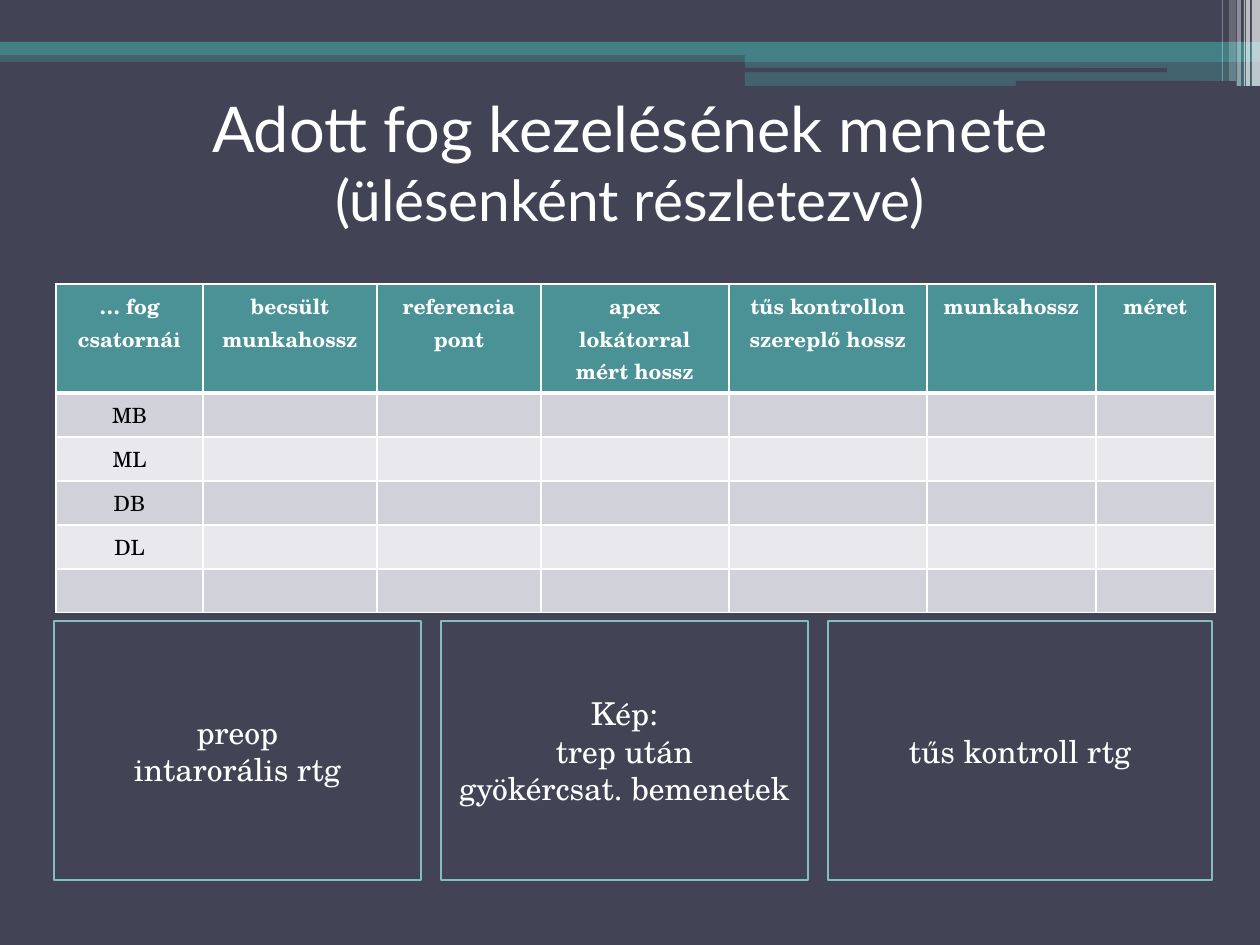
from lxml import etree
from pptx import Presentation
from pptx import util as u
from pptx.dml.color import RGBColor
from pptx.enum import shapes, text
from pptx.oxml.ns import qn

PX = 914400 // 126
DARK, TEAL, WHITE = "424456", "438086", "FFFFFF"
SERIF = "TeX Gyre Schola"
RECT = shapes.MSO_SHAPE.RECTANGLE
ROUND = shapes.MSO_SHAPE.ROUNDED_RECTANGLE

# left, top, width, height, colour, opacity in percent
BARS = [
    (0, 50, 1260, 12, TEAL, 50),
    (0, 0, 1260, 43, DARK, 100),
    (0, 42, 1260, 13, TEAL, 100),
    (745, 49, 515, 13, TEAL, 100),
    (745, 61, 515, 25, TEAL, 50),
]
GROOVES = [(745, 68, 422, 4), (1016, 81, 220, 5)]
# left, width, height, opacity in percent
STRIPES = [
    (1252, 8, 86, 65), (1246, 4, 86, 65), (1244, 1, 86, 60),
    (1237, 4, 86, 40), (1229, 7, 81, 20), (1222, 1, 81, 30),
]
HEADS = [
    ["… fog", "csatornái"], ["becsült munkahossz"], ["referencia pont"],
    ["apex lokátorral mért hossz"], ["tűs kontrollon szereplő hossz"],
    ["munkahossz"], ["méret"],
]
WIDTHS = [147, 174, 164, 188, 198, 169, 119]
CANALS = ["MB", "ML", "DB", "DL", ""]
FRAMES = [
    (54, 367, ["preop", "intarorális rtg"]),
    (441, 367, ["Kép:", "trep után", "gyökércsat. bemenetek"]),
    (828, 384, ["tűs kontroll rtg"]),
]


def rgb(code):
    return RGBColor.from_string(code)


def area(*sizes):
    return [size * PX for size in sizes]


def style(font, name, size, color, bold=False):
    font.name, font.size, font.bold = name, u.Pt(size), bold
    font.color.rgb = rgb(color)


def write(frame, lines, size, color, bold=False):
    """Put each line in a centred paragraph of its own."""
    frame.word_wrap = True
    for i, line in enumerate(lines):
        para = frame.add_paragraph() if i else frame.paragraphs[0]
        para.text = line
        para.alignment = text.PP_ALIGN.CENTER
        style(para.font, SERIF, size, color, bold)


def add_bar(slide, box, color, alpha=100, kind=RECT):
    bar = slide.shapes.add_shape(kind, *area(*box))
    bar.shadow.inherit = False
    bar.line.fill.background()
    bar.fill.solid()
    bar.fill.fore_color.rgb = rgb(color)
    if alpha < 100:
        tone = bar.fill._xPr.find(".//" + qn("a:srgbClr"))
        etree.SubElement(tone, qn("a:alpha"), val=str(alpha * 1000))


def add_frame(slide, left, width, lines):
    frame = slide.shapes.add_shape(RECT, *area(left, 621, width, 259))
    frame.shadow.inherit = False
    frame.fill.background()
    frame.line.color.rgb = rgb("83BCC1")
    frame.line.width = u.Pt(1.5)
    frame.text_frame.vertical_anchor = text.MSO_ANCHOR.MIDDLE
    write(frame.text_frame, lines, 18, WHITE)


def add_title(slide):
    frame = slide.shapes.add_textbox(*area(0, 88, 1260, 147)).text_frame
    frame.word_wrap = True
    frame.vertical_anchor = text.MSO_ANCHOR.MIDDLE
    para = frame.paragraphs[0]
    para.alignment = text.PP_ALIGN.CENTER
    head = para.add_run()
    head.text = "Adott fog kezelésének menete"
    style(head.font, "Lato", 36, WHITE)
    para.add_line_break()
    note = para.add_run()
    note.text = "(ülésenként részletezve)"
    style(note.font, "Lato", 32.4, WHITE)


def edge(cell, top, bottom):
    """Draw white borders; top and bottom are widths in points."""
    props = cell._tc.get_or_add_tcPr()
    sides = {"L": 1, "R": 1, "T": top, "B": bottom}
    for i, (side, width) in enumerate(sides.items()):
        line = etree.Element(qn("a:ln" + side), w=str(u.Pt(width)))
        fill = etree.SubElement(line, qn("a:solidFill"))
        etree.SubElement(fill, qn("a:srgbClr"), val=WHITE)
        props.insert(i, line)


def add_cell(cell, lines, row):
    cell.fill.solid()
    fill = "4B9297" if row == 0 else "D1D1DA" if row % 2 else "E9E9ED"
    cell.fill.fore_color.rgb = rgb(fill)
    edge(cell, 3 if row == 1 else 1, 3 if row == 0 else 1)
    if any(lines):
        # A slim bottom margin keeps the row at its set height.
        cell.margin_bottom = 2 * PX
        write(cell.text_frame, lines, 12, "000000" if row else WHITE,
              bold=row == 0)
    else:
        cell.margin_top = cell.margin_bottom = 0


def add_grid(slide):
    rows = [HEADS] + [[[name]] + [[""]] * (len(HEADS) - 1) for name in CANALS]
    box = area(56, 284, sum(WIDTHS), 329)
    table = slide.shapes.add_table(len(rows), len(HEADS), *box).table
    for col, width in zip(table.columns, WIDTHS):
        col.width = width * PX
    for r, row in enumerate(rows):
        table.rows[r].height = (44 if r else 109) * PX
        for c, lines in enumerate(row):
            add_cell(table.cell(r, c), lines, r)


def main():
    deck = Presentation()
    deck.slide_width, deck.slide_height = area(1260, 945)
    slide = deck.slides.add_slide(deck.slide_layouts[6])
    slide.background.fill.solid()
    slide.background.fill.fore_color.rgb = rgb(DARK)
    for *box, color, alpha in BARS:
        add_bar(slide, box, color, alpha)
    for box in GROOVES:
        add_bar(slide, box, DARK, kind=ROUND)
    for left, width, height, alpha in STRIPES:
        add_bar(slide, (left, 0, width, height), WHITE, alpha)
    add_title(slide)
    add_grid(slide)
    for frame in FRAMES:
        add_frame(slide, *frame)
    deck.save("out.pptx")


if __name__ == "__main__":
    main()
